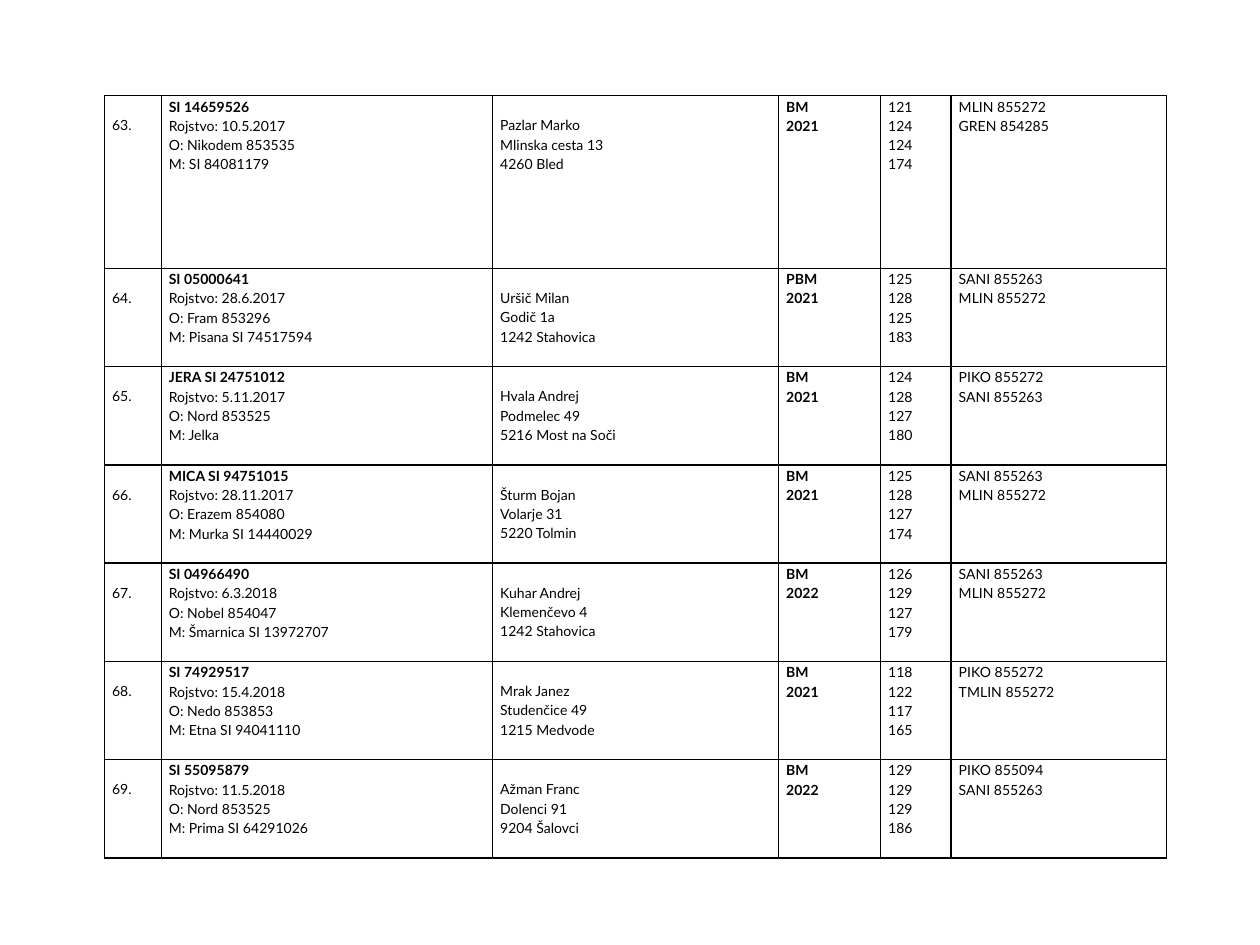
from dataclasses import dataclass

from lxml import etree
from pptx import Presentation
from pptx.dml.color import RGBColor
from pptx.enum.text import PP_ALIGN
from pptx.oxml.ns import qn
from pptx.util import Inches, Pt

JUSTIFY = PP_ALIGN.JUSTIFY
BLACK = "000000"
FONT = "Lato"
LINE_HEIGHT = 0.15
COLUMN_WIDTHS = (0.45, 2.63, 2.27, 0.81, 0.56, 1.71)
ROW_HEIGHTS = (1.37,) + (0.78,) * 6
FIRST_NUMBER = 63


@dataclass(frozen=True)
class Mare:
    identity: str
    birth: str
    father: str
    mother: str
    owner: tuple[str, str, str]
    grade: tuple[str, str]
    measures: tuple[int, int, int, int]
    stallions: tuple[str, str]


@dataclass(frozen=True)
class Entry:
    lines: tuple[str, ...]
    bold_lines: int = 0
    lowered: bool = False


MARES = (
    Mare("SI 14659526", "10.5.2017", "Nikodem 853535", "SI 84081179",
         ("Pazlar Marko", "Mlinska cesta 13", "4260 Bled"),
         ("BM", "2021"), (121, 124, 124, 174), ("MLIN 855272", "GREN 854285")),
    Mare("SI 05000641", "28.6.2017", "Fram 853296", "Pisana SI 74517594",
         ("Uršič Milan", "Godič 1a", "1242 Stahovica"),
         ("PBM", "2021"), (125, 128, 125, 183), ("SANI 855263", "MLIN 855272")),
    Mare("JERA SI 24751012", "5.11.2017", "Nord 853525", "Jelka",
         ("Hvala Andrej", "Podmelec 49", "5216 Most na Soči"),
         ("BM", "2021"), (124, 128, 127, 180), ("PIKO 855272", "SANI 855263")),
    Mare("MICA SI 94751015", "28.11.2017", "Erazem 854080", "Murka SI 14440029",
         ("Šturm Bojan", "Volarje 31", "5220 Tolmin"),
         ("BM", "2021"), (125, 128, 127, 174), ("SANI 855263", "MLIN 855272")),
    Mare("SI 04966490", "6.3.2018", "Nobel 854047", "Šmarnica SI 13972707",
         ("Kuhar Andrej", "Klemenčevo 4", "1242 Stahovica"),
         ("BM", "2022"), (126, 129, 127, 179), ("SANI 855263", "MLIN 855272")),
    Mare("SI 74929517", "15.4.2018", "Nedo 853853", "Etna SI 94041110",
         ("Mrak Janez", "Studenčice 49", "1215 Medvode"),
         ("BM", "2021"), (118, 122, 117, 165), ("PIKO 855272", "TMLIN 855272")),
    Mare("SI 55095879", "11.5.2018", "Nord 853525", "Prima SI 64291026",
         ("Ažman Franc", "Dolenci 91", "9204 Šalovci"),
         ("BM", "2022"), (129, 129, 129, 186), ("PIKO 855094", "SANI 855263")),
)


def color(value: str) -> RGBColor:
    return RGBColor.from_string(value)


def apply(target, values: dict) -> None:
    for key, value in values.items():
        setattr(target, key, value)


def draw_borders(cell) -> None:
    properties = cell._tc.get_or_add_tcPr()
    for side in ("a:lnL", "a:lnR", "a:lnT", "a:lnB"):
        line = etree.SubElement(properties, qn(side), w=str(Pt(1)))
        fill = etree.SubElement(line, qn("a:solidFill"))
        etree.SubElement(fill, qn("a:srgbClr"), val=BLACK)


def fill_cell(cell, entry: Entry) -> None:
    draw_borders(cell)
    cell.fill.background()
    apply(cell, {
        "margin_left": Inches(0.06),
        "margin_right": Inches(0.06),
        "margin_top": Inches(LINE_HEIGHT if entry.lowered else 0),
        "margin_bottom": 0,
    })
    cell.text_frame.text = "\n".join(entry.lines)
    for index, paragraph in enumerate(cell.text_frame.paragraphs):
        apply(paragraph, {"alignment": JUSTIFY, "line_spacing": 1.15})
        font = paragraph.runs[0].font
        apply(font, {"name": FONT, "size": Pt(8), "bold": index < entry.bold_lines})
        font.color.rgb = color(BLACK)


def entries(number: int, mare: Mare) -> tuple[Entry, ...]:
    pedigree = (mare.identity, f"Rojstvo: {mare.birth}",
                f"O: {mare.father}", f"M: {mare.mother}")
    return (
        Entry((f"{number}.",), lowered=True),
        Entry(pedigree, bold_lines=1),
        Entry(mare.owner, lowered=True),
        Entry(mare.grade, bold_lines=2),
        Entry(tuple(str(measure) for measure in mare.measures)),
        Entry(mare.stallions),
    )


def main() -> None:
    presentation = Presentation()
    apply(presentation, {"slide_width": Inches(10), "slide_height": Inches(7.5)})
    slide = presentation.slides.add_slide(presentation.slide_layouts[6])
    register = slide.shapes.add_table(
        len(MARES), len(COLUMN_WIDTHS), Inches(0.83), Inches(0.76),
        Inches(sum(COLUMN_WIDTHS)), Inches(sum(ROW_HEIGHTS))).table
    apply(register, {"first_row": False, "horz_banding": False})
    for column, width in zip(register.columns, COLUMN_WIDTHS):
        column.width = Inches(width)
    for row, height in zip(register.rows, ROW_HEIGHTS):
        row.height = Inches(height)
    for number, (row, mare) in enumerate(zip(register.rows, MARES), FIRST_NUMBER):
        for cell, entry in zip(row.cells, entries(number, mare)):
            fill_cell(cell, entry)
    presentation.save("out.pptx")


if __name__ == "__main__":
    main()
